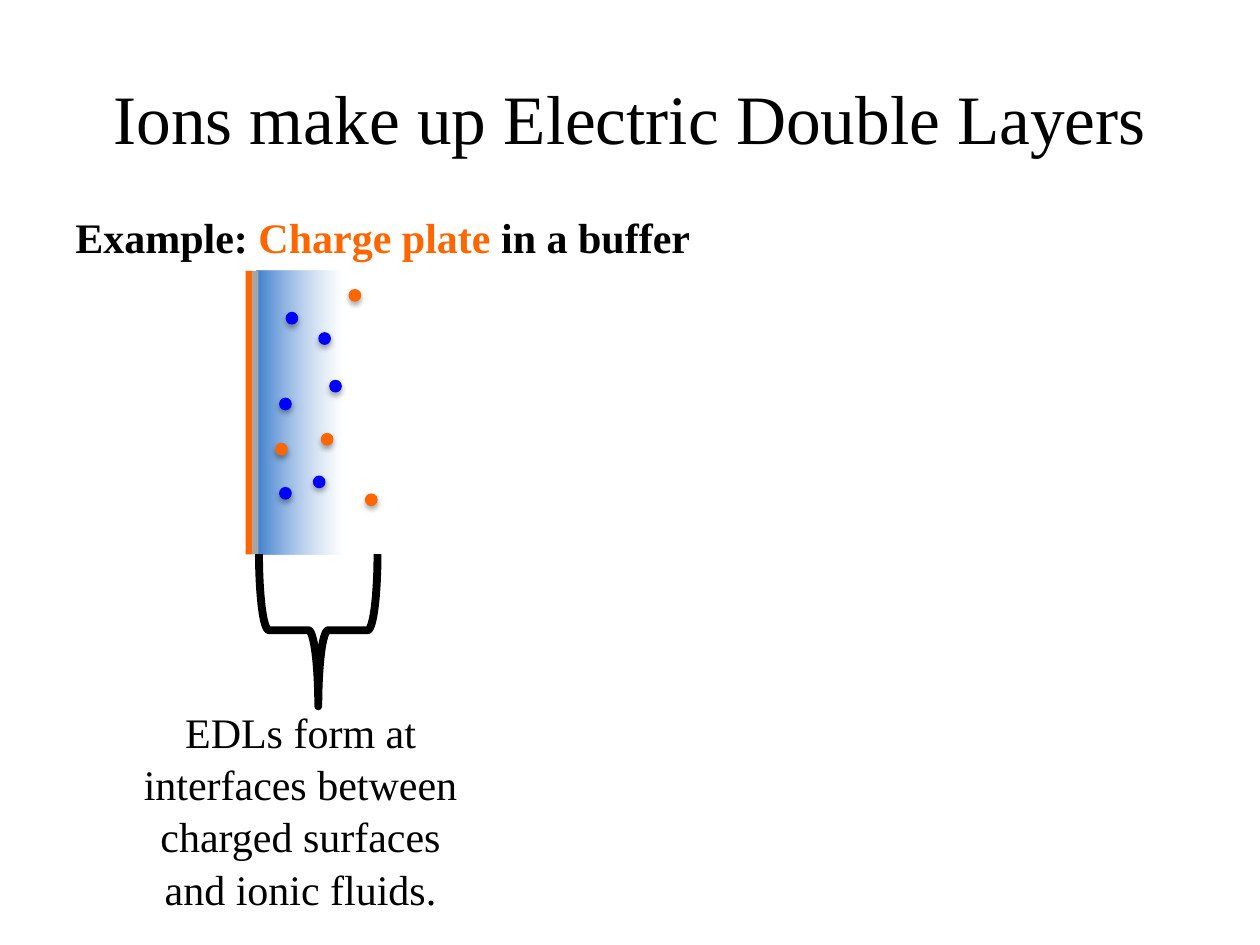
from lxml.etree import SubElement
from pptx import Presentation
from pptx.dml.color import RGBColor
from pptx.enum.shapes import MSO_SHAPE
from pptx.enum.text import MSO_ANCHOR, MSO_AUTO_SIZE, PP_ALIGN
from pptx.oxml import parse_xml
from pptx.oxml.ns import nsdecls, qn
from pptx.util import Cm, Pt

COLORS = {
    "black": "000000",
    "orange": "FF6600",
    "blue": "0000FF",
    "gray": "A6A6A6",
    "cloud_edge": "8EB4E3",
    "cloud_core": "3F80CE",
}
PLATE_TOP, PLATE_HEIGHT = 5.46, 5.72
LAYER_WIDTH = 0.13
DOT_SIZE = 0.23
DOT_SHADOW = f"""<a:effectLst {nsdecls("a")}>
  <a:outerShdw blurRad="40000" dist="23000" dir="5400000" rotWithShape="0">
    <a:srgbClr val="{COLORS["black"]}"><a:alpha val="35000"/></a:srgbClr>
  </a:outerShdw>
</a:effectLst>"""


def add_plain_shape(kind, left, top, width, height, fill=None, line=None, line_width=0.75):
    """Add a shape without shadow; a fill or line of None is left empty."""
    shape = slide.shapes.add_shape(kind, Cm(left), Cm(top), Cm(width), Cm(height))
    shape.shadow.inherit = False
    if fill:
        shape.fill.solid()
        shape.fill.fore_color.rgb = RGBColor.from_string(COLORS[fill])
    else:
        shape.fill.background()
    if line:
        shape.line.color.rgb = RGBColor.from_string(COLORS[line])
        shape.line.width = Pt(line_width)
    else:
        shape.line.fill.background()
    return shape


def write_text(shape, runs, alignment, **font_format):
    """Fill the first paragraph with (text, color name) runs."""
    shape.text_frame.word_wrap = True
    paragraph = shape.text_frame.paragraphs[0]
    paragraph.alignment = alignment
    for text, color in runs:
        run = paragraph.add_run()
        run.text = text
        run.font.color.rgb = RGBColor.from_string(COLORS[color])
        for name, value in {"name": "Times New Roman", **font_format}.items():
            setattr(run.font, name, value)
    return paragraph


presentation = Presentation()
presentation.slide_width, presentation.slide_height = Cm(25.4), Cm(19.05)
slide = presentation.slides.add_slide(presentation.slide_layouts[5])

# Title and example line
title = slide.shapes.title
title.left, title.top, title.width, title.height = Cm(1.27), Cm(0.76), Cm(22.86), Cm(3.18)
title.text_frame.vertical_anchor = MSO_ANCHOR.MIDDLE
write_text(title, [("Ions make up Electric Double Layers", "black")], PP_ALIGN.CENTER, size=Pt(39.6))

example = slide.shapes.add_textbox(Cm(1.27), Cm(3.89), Cm(16.36), Cm(1.78))
example.text_frame.vertical_anchor = MSO_ANCHOR.MIDDLE
example_runs = [("Example: ", "black"), ("Charge plate ", "orange"), ("in a buffer", "black")]
write_text(example, example_runs, PP_ALIGN.LEFT, size=Pt(24), bold=True)

# Diffuse layer fading away from the plate
cloud = add_plain_shape(MSO_SHAPE.RECTANGLE, 5.18, PLATE_TOP, 4.55, PLATE_HEIGHT)
cloud.fill.gradient()
cloud.fill.gradient_angle = 180
for stop, position, color in zip(cloud.fill.gradient_stops, (0.62, 1), ("cloud_edge", "cloud_core")):
    stop.position = position
    stop.color.rgb = RGBColor.from_string(COLORS[color])
edge_color = cloud.fill._xPr.find(".//" + qn("a:srgbClr"))
SubElement(edge_color, qn("a:alpha"), val="0")

# Charged plate and the layer bound to it
for left, color in ((4.95, "orange"), (5.08, "gray")):
    add_plain_shape(MSO_SHAPE.RECTANGLE, left, PLATE_TOP, LAYER_WIDTH, PLATE_HEIGHT, color)

# Ions
ions = {
    "orange": [(6.48, 8.74), (7.04, 5.84), (7.37, 9.96), (5.56, 8.94)],
    "blue": [(5.64, 9.83), (5.64, 8.03), (6.32, 9.6), (5.77, 6.3), (6.43, 6.71), (6.65, 7.67)],
}
for color, positions in ions.items():
    for left, top in positions:
        ion = add_plain_shape(MSO_SHAPE.OVAL, left, top, DOT_SIZE, DOT_SIZE, color, color)
        properties = ion._element.spPr
        properties.replace(properties.find(qn("a:effectLst")), parse_xml(DOT_SHADOW))

# Brace and caption
brace = add_plain_shape(MSO_SHAPE.RIGHT_BRACE, 4.88, 11.51, 3.07, 2.39, line="black", line_width=4.5)
brace.rotation = 90

caption = slide.shapes.add_textbox(Cm(2.34), Cm(14.07), Cm(7.44), Cm(4.37))
caption.text_frame.auto_size = MSO_AUTO_SIZE.SHAPE_TO_FIT_TEXT
caption_text = "EDLs form at interfaces between charged surfaces and ionic fluids."
paragraph = write_text(caption, [(caption_text, "black")], PP_ALIGN.CENTER, size=Pt(24))
paragraph.line_spacing = 1.04

presentation.save("out.pptx")
